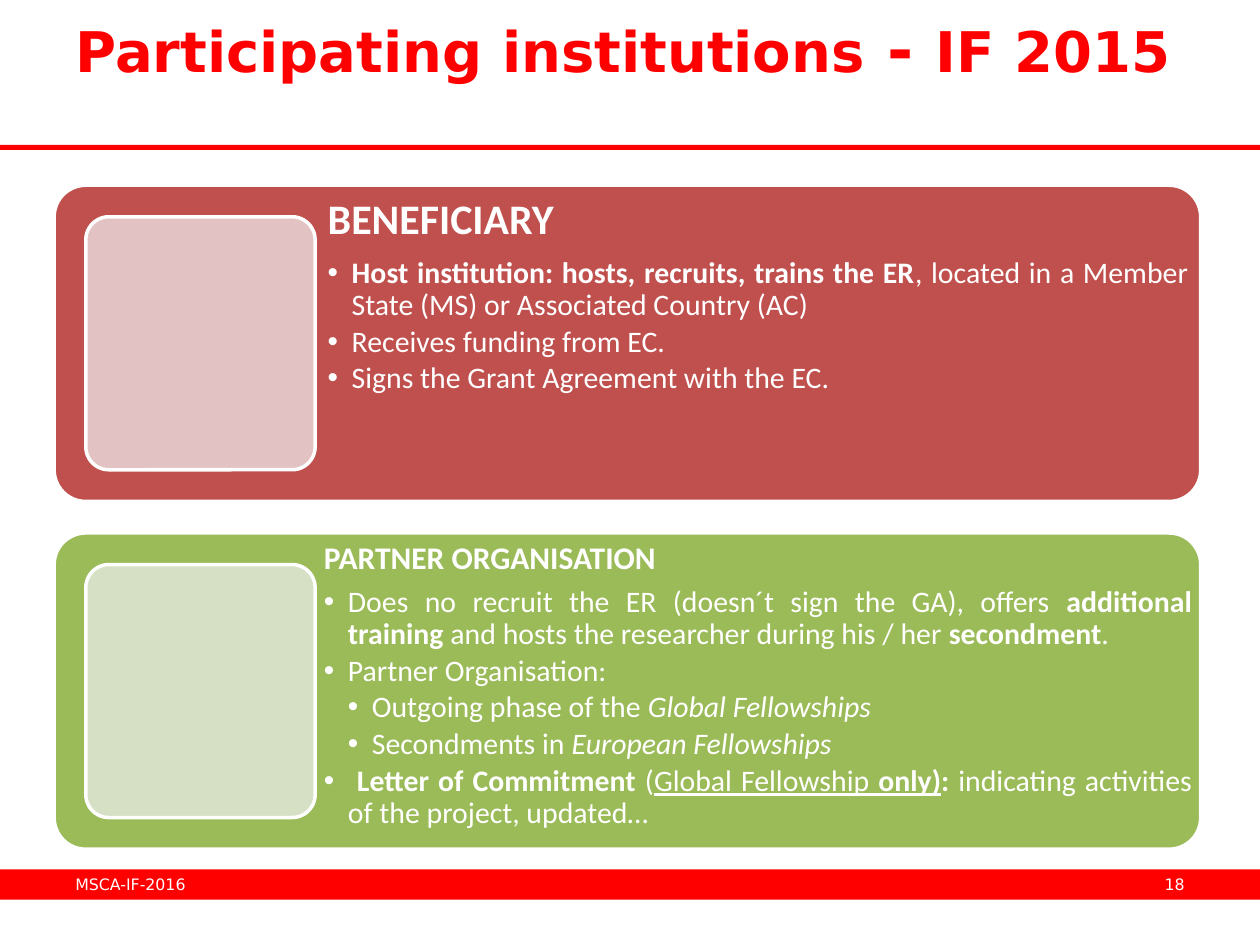
from lxml import etree
from pptx import Presentation
from pptx.dml.color import RGBColor
from pptx.enum.shapes import MSO_SHAPE
from pptx.enum.text import MSO_ANCHOR, MSO_AUTO_SIZE, PP_ALIGN
from pptx.oxml.ns import qn
from pptx.util import Inches, Pt

RECT, ROUNDED = MSO_SHAPE.RECTANGLE, MSO_SHAPE.ROUNDED_RECTANGLE
LEFT, RIGHT, JUSTIFY = PP_ALIGN.LEFT, PP_ALIGN.RIGHT, PP_ALIGN.JUSTIFY
TOP, MIDDLE = MSO_ANCHOR.TOP, MSO_ANCHOR.MIDDLE
NO_FIT = MSO_AUTO_SIZE.NONE

COLORS = {name: RGBColor.from_string(value) for name, value in {
    "red": "FF0000", "white": "FFFFFF",
    "beneficiary": "C0504D", "beneficiary_tile": "E2C2C2",
    "partner": "9BBB59", "partner_tile": "D5E0C4",
}.items()}

CARD_LEFT, CARD_TOP, CARD_WIDTH, CARD_HEIGHT = 0.43, 1.47, 9.1, 2.51
CARD_PITCH = 2.76
PADDING = CARD_HEIGHT / 10
TILE_WIDTH = 1.82
LIST_LEFT = CARD_LEFT + PADDING + TILE_WIDTH
LIST_WIDTH = CARD_LEFT + CARD_WIDTH - LIST_LEFT
INDENT = 0.19
BULLET_SIZE = 17

# Each bullet: level, then runs with styles (b bold, i italic, u underlined)
CARDS = [
    ("beneficiary", "BENEFICIARY", 24, 0.1, [
        (1, [("Host institution: hosts, recruits, trains the ER", "b"),
             (", located in a Member State (MS) or Associated Country (AC)", "")]),
        (1, [("Receives funding from EC.", "")]),
        (1, [("Signs the Grant Agreement with the EC.", "")]),
    ]),
    ("partner", "PARTNER ORGANISATION", 18, 0.07, [
        (1, [("Does no recruit the ER (doesn´t sign the GA), offers ", ""),
             ("additional training ", "b"),
             ("and hosts the researcher during his / her ", ""),
             ("secondment", "b"), (".", "")]),
        (1, [("Partner Organisation:", "")]),
        (2, [("Outgoing phase of the ", ""), ("Global Fellowships", "i")]),
        (2, [("Secondments in ", ""), ("European Fellowships", "i")]),
        (1, [(" ", ""), ("Letter of Commitment ", "b"), ("(", ""),
             ("Global Fellowship ", "u"), ("only)", "bu"), (": ", "b"),
             ("indicating activities of the project, updated…", "")]),
    ]),
]


def add_block(kind, left, top, width, height, fill, outline=None):
    block = slide.shapes.add_shape(
        kind, Inches(left), Inches(top), Inches(width), Inches(height))
    block.shadow.inherit = False
    block.fill.solid()
    block.fill.fore_color.rgb = COLORS[fill]
    if kind == ROUNDED:
        block.adjustments[0] = 0.1
    if outline:
        block.line.color.rgb = COLORS[outline]
        block.line.width = Pt(2)
    else:
        block.line.fill.background()


def format_paragraph(paragraph, size, level=0, after=0):
    """Set bullet, indent, spacing and font; level 0 has no bullet."""
    properties = paragraph._p.get_or_add_pPr()
    properties.set("marL", str(Inches(INDENT * level)))
    properties.set("indent", str(Inches(-INDENT if level else 0)))
    if level:
        etree.SubElement(properties, qn("a:buChar")).set("char", "•")
    else:
        etree.SubElement(properties, qn("a:buNone"))
    paragraph.level = level
    paragraph.alignment = JUSTIFY if level else LEFT
    paragraph.line_spacing = 0.9
    paragraph.space_before = Pt(0)
    paragraph.space_after = Pt(size * after)
    paragraph.font.size = Pt(size)
    paragraph.font.name = "Calibri"
    paragraph.font.color.rgb = COLORS["white"]


prs = Presentation()
prs.slide_width, prs.slide_height = Inches(10), Inches(7.5)
slide = prs.slides.add_slide(prs.slide_layouts[3])
title, *card_lists = slide.placeholders

# Header rule and footer band
add_block(RECT, 0, 6.9, 10, 0.24, "red")
add_block(RECT, 0, 1.15, 10, 0.04, "red")

# Cards
for row, (card, card_list) in enumerate(zip(CARDS, card_lists)):
    color, heading, heading_size, inset, bullets = card
    top = CARD_TOP + row * CARD_PITCH
    add_block(ROUNDED, CARD_LEFT, top, CARD_WIDTH, CARD_HEIGHT, color, "white")
    add_block(ROUNDED, CARD_LEFT + PADDING, top + PADDING, TILE_WIDTH,
              CARD_HEIGHT - 2 * PADDING, f"{color}_tile", "white")

    card_list.left, card_list.top = Inches(LIST_LEFT), Inches(top)
    card_list.width, card_list.height = Inches(LIST_WIDTH), Inches(CARD_HEIGHT)
    # Bring the list in front of its card
    card_list.element.getparent().append(card_list.element)
    frame = card_list.text_frame
    frame.word_wrap, frame.auto_size = True, NO_FIT
    frame.vertical_anchor = TOP
    frame.margin_left = frame.margin_right = Inches(inset)
    frame.margin_top = frame.margin_bottom = Inches(inset)

    frame.text = heading
    format_paragraph(frame.paragraphs[0], heading_size, after=0.35)
    frame.paragraphs[0].font.bold = True
    for level, runs in bullets:
        paragraph = frame.add_paragraph()
        format_paragraph(paragraph, BULLET_SIZE, level, after=0.15)
        for text, style in runs:
            run = paragraph.add_run()
            run.text = text
            run.font.bold = "b" in style
            run.font.italic = "i" in style
            run.font.underline = "u" in style

# Title, raised within its box by the deep bottom margin
title.left, title.top = Inches(0.5), Inches(0.13)
title.width, title.height = Inches(9), Inches(0.94)
frame = title.text_frame
frame.word_wrap, frame.auto_size = True, NO_FIT
frame.vertical_anchor = MIDDLE
frame.margin_top, frame.margin_bottom = 0, Inches(0.45)
paragraph = frame.paragraphs[0]
paragraph.alignment = LEFT
paragraph.font.name = "DejaVu Sans"
paragraph.font.bold = True
paragraph.font.color.rgb = COLORS["red"]
for text, size in [("Participating institutions", 32), (" - ", 36), ("IF 2015", 32)]:
    run = paragraph.add_run()
    run.text = text
    run.font.size = Pt(size)

# Footer texts
for text, left, alignment in [("18", 7.17, RIGHT), ("MSCA-IF-2016", 0.5, LEFT)]:
    footer = slide.shapes.add_textbox(
        Inches(left), Inches(6.82), Inches(2.33), Inches(0.4))
    frame = footer.text_frame
    frame.word_wrap = True
    frame.vertical_anchor = MIDDLE
    frame.text = text
    paragraph = frame.paragraphs[0]
    paragraph.alignment = alignment
    paragraph.font.name = "DejaVu Sans"
    paragraph.font.size = Pt(9)
    paragraph.font.color.rgb = COLORS["white"]

prs.save("out.pptx")
